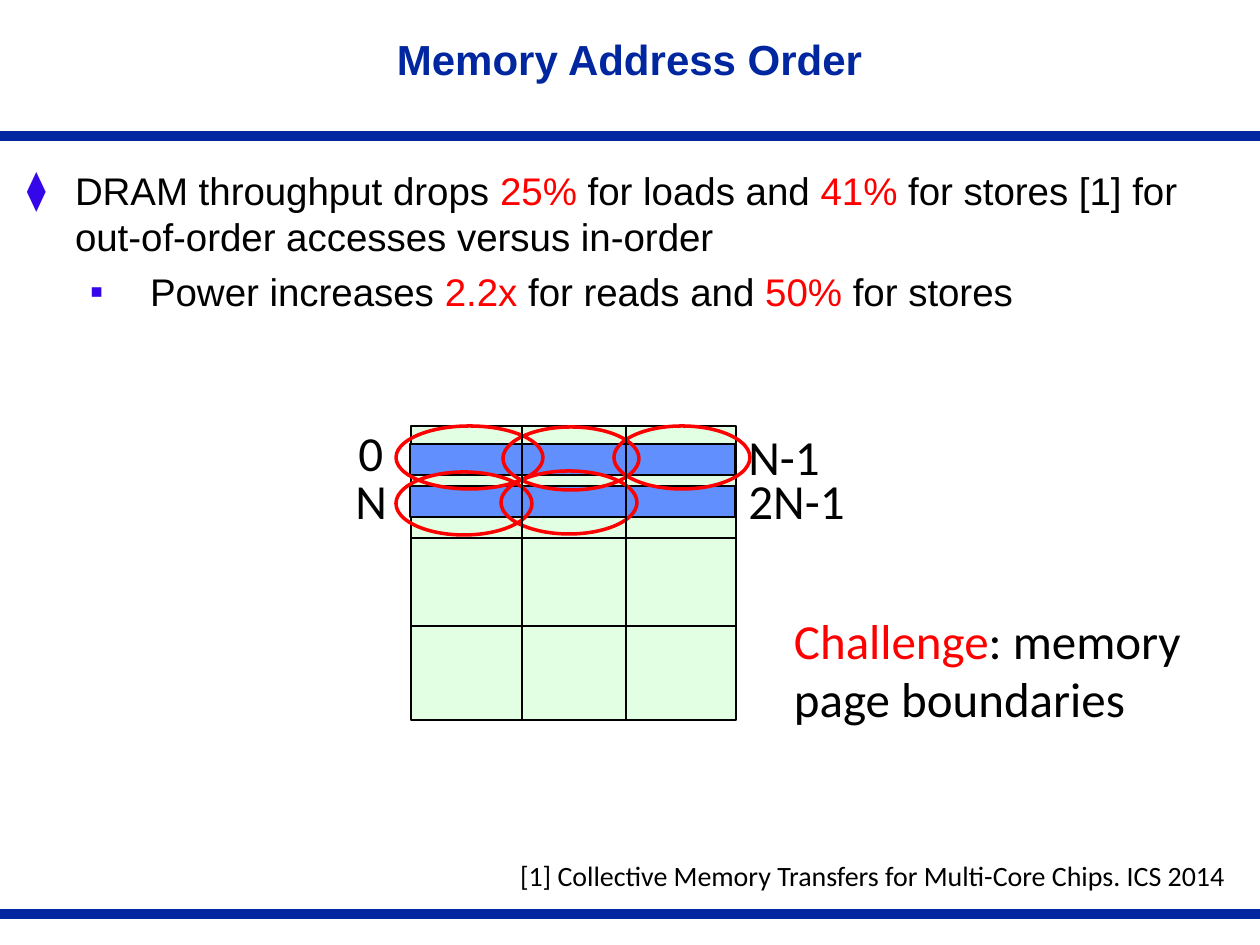
from lxml import etree
from pptx import Presentation
from pptx import util as u
from pptx.dml.color import RGBColor
from pptx.enum import shapes, text
from pptx.oxml.ns import qn

PX = 914400 / 126
NAVY, VIOLET, RED, BLACK = "00279F", "3406E9", "FF0000", "000000"

TITLE = [("Memory Address Order", NAVY)]
BULLETS = [
    ("⧫", 48, 48, [
        ("DRAM throughput drops ", BLACK), ("25%", RED), (" for loads and ", BLACK),
        ("41%", RED), (" for stores [1] for out-of-order accesses versus in-order", BLACK)]),
    ("▪", 123, 60, [
        ("Power increases ", BLACK), ("2.2x ", RED), ("for reads and ", BLACK),
        ("50%", RED), (" for stores", BLACK)]),
]
CITATION = [("[1] Collective Memory Transfers for Multi-Core Chips. ICS 2014", BLACK)]
CHALLENGE = [("Challenge", RED), (": memory page boundaries", BLACK)]
ADDRESSES = [("0", 346, 416, 53), ("N-1", 736, 420, 105),
             ("N", 343, 464, 62), ("2N-1", 736, 464, 132)]

RULES = [914, 136]
GRID = (411, 426, 325, 294)
ROW_LINES = [538, 626]
COLUMN_LINES = [522, 626]
ADDRESS_ROWS = [444, 486]
BURSTS = [(396, 426, 147), (501, 471, 136), (503, 427, 136), (614, 426, 136), (396, 472, 136)]


def px(value):
    return u.Emu(round(value * PX))


def rgb(value):
    return RGBColor.from_string(value)


def add_box(page, place, inset=6, wrap=True, anchor=text.MSO_ANCHOR.TOP):
    frame = page.shapes.add_textbox(*map(px, place)).text_frame
    frame.word_wrap = wrap
    frame.vertical_anchor = anchor
    frame.margin_left = frame.margin_right = px(inset)
    frame.margin_top = frame.margin_bottom = px(6)
    return frame


def write(para, spans, size, font="Calibri", bold=False):
    para.font.size = u.Pt(size)
    for words, color in spans:
        span = para.add_run()
        span.text = words
        span.font.size = u.Pt(size)
        span.font.name = font
        span.font.bold = bold
        span.font.color.rgb = rgb(color)


def add_bullet(para, mark, left, hang):
    props = para._p.get_or_add_pPr()
    props.set("marL", str(px(left)))
    props.set("indent", str(-px(hang)))
    color = etree.SubElement(props, qn("a:buClr"))
    etree.SubElement(color, qn("a:srgbClr"), val=VIOLET)
    etree.SubElement(props, qn("a:buFont"), typeface="Arial")
    etree.SubElement(props, qn("a:buChar"), char=mark)


def add_line(page, start, end, color=BLACK, width=1):
    line = page.shapes.add_connector(shapes.MSO_CONNECTOR.STRAIGHT, *map(px, start + end))
    line.line.color.rgb = rgb(color)
    line.line.width = u.Pt(width)
    etree.SubElement(line._element.spPr, qn("a:effectLst"))


def add_figure(page, kind, place, fill=None, line=BLACK, width=1, alpha=None):
    figure = page.shapes.add_shape(kind, *map(px, place))
    figure.shadow.inherit = False
    figure.line.color.rgb = rgb(line)
    figure.line.width = u.Pt(width)
    if fill:
        figure.fill.solid()
        figure.fill.fore_color.rgb = rgb(fill)
    else:
        figure.fill.background()
    if alpha:
        color = figure._element.spPr.find(qn("a:solidFill")).find(qn("a:srgbClr"))
        etree.SubElement(color, qn("a:alpha"), val=str(alpha * 1000))


def add_words(page):
    title = add_box(page, (220, 10, 819, 105), anchor=text.MSO_ANCHOR.MIDDLE).paragraphs[0]
    title.alignment = text.PP_ALIGN.CENTER
    title.line_spacing = 0.85
    write(title, TITLE, 24, "Arial", bold=True)

    body = add_box(page, (21, 161, 1218, 731))
    for index, (mark, left, hang, spans) in enumerate(BULLETS):
        para = body.add_paragraph() if index else body.paragraphs[0]
        add_bullet(para, mark, left, hang)
        if index:
            para.space_before = u.Pt(5)
        write(para, spans, 22, "Arial")

    write(add_box(page, (514, 853, 726, 47), wrap=False).paragraphs[0], CITATION, 16)
    write(add_box(page, (788, 604, 472, 131)).paragraphs[0], CHALLENGE, 28)
    for words, left, top, width in ADDRESSES:
        label = add_box(page, (left, top, width, 72), inset=12.6, wrap=False)
        write(label.paragraphs[0], [(words, BLACK)], 28)


def add_memory(page):
    left, top, width, height = GRID
    add_figure(page, shapes.MSO_SHAPE.RECTANGLE, GRID, fill="CCFFCC", alpha=54)
    for y in ROW_LINES:
        add_line(page, (left, y), (left + width, y))
    for y in ADDRESS_ROWS:
        add_figure(page, shapes.MSO_SHAPE.RECTANGLE, (left - 1, y, width, 31), fill="618FFD")
    for x, y, span in BURSTS:
        add_figure(page, shapes.MSO_SHAPE.OVAL, (x, y, span, 63), line=RED, width=2)
    for x in COLUMN_LINES:
        add_line(page, (x, top), (x, top + height))


def main():
    deck = Presentation()
    deck.slide_width, deck.slide_height = px(1260), px(945)
    page = deck.slides.add_slide(deck.slide_layouts[6])
    for y in RULES:
        add_line(page, (1260, y), (0, y), NAVY, 6)
    add_words(page)
    add_memory(page)
    deck.save("out.pptx")


if __name__ == "__main__":
    main()
